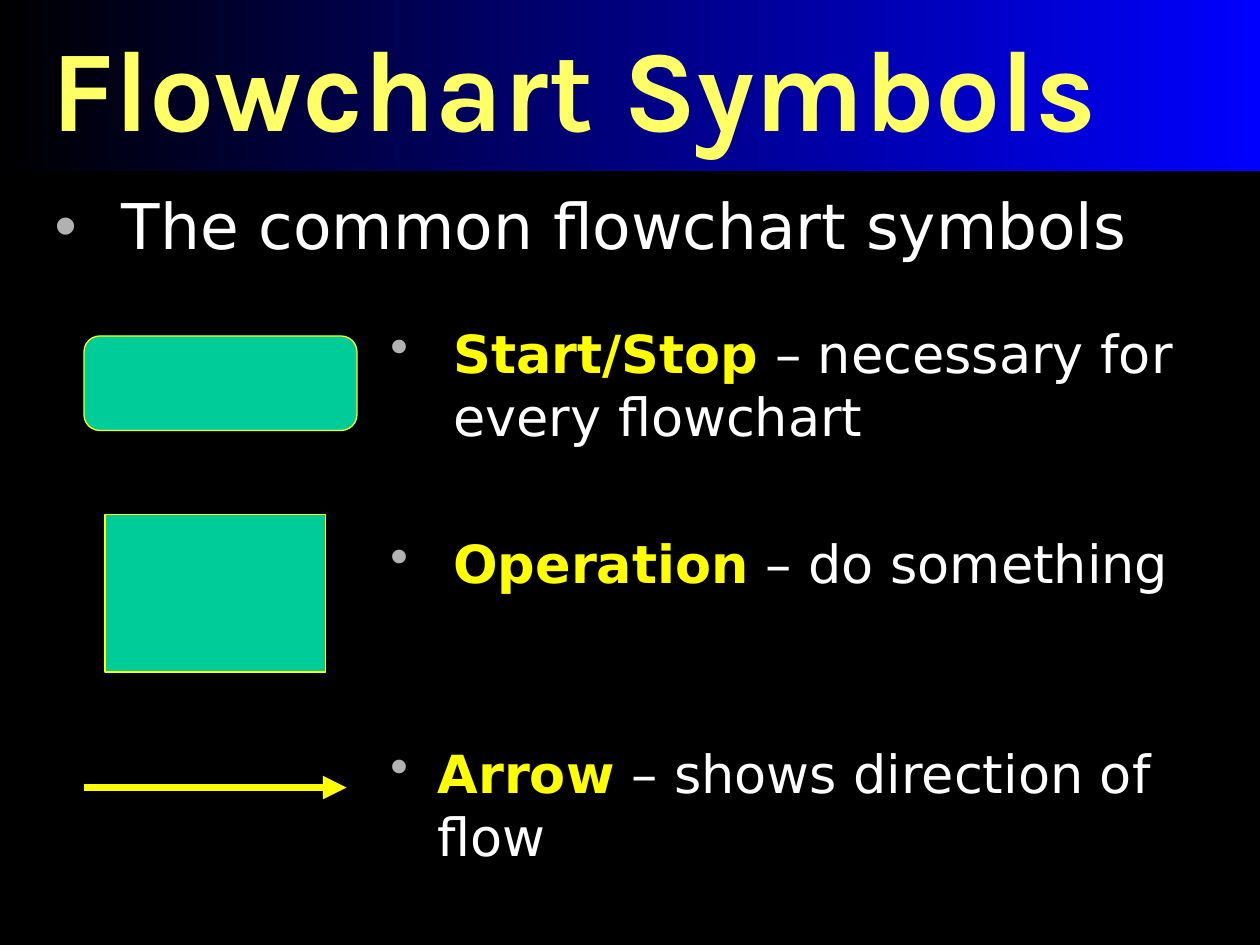
from dataclasses import dataclass
from typing import Any, Optional

from lxml.etree import SubElement
from pptx import Presentation
from pptx.dml.color import RGBColor
from pptx.enum.shapes import MSO_CONNECTOR, MSO_SHAPE
from pptx.enum.text import MSO_ANCHOR, MSO_AUTO_SIZE, PP_ALIGN
from pptx.oxml.ns import qn
from pptx.util import Emu, Pt

EMU_PER_PX = 7620
COLORS = {
    "background": "000000",
    "banner": "0000FF",
    "title": "FFFF66",
    "text": "FFFFFF",
    "accent": "FFFF00",
    "symbol": "00CC99",
    "bullet": "B2B2B2",
}
TITLE_FONT = {"name": "Karla", "size": Pt(66), "bold": True}
HEADING_FONT = {"name": "DejaVu Sans", "size": Pt(36), "bold": False}
TERM_FONT = {"name": "DejaVu Sans", "size": Pt(30), "bold": True}
MEANING_FONT = {**TERM_FONT, "bold": False}


@dataclass
class Box:
    left: int
    top: int
    width: int
    height: int


@dataclass
class FlowchartSymbol:
    term: str
    meaning: str
    box: Box
    preset: Optional[MSO_SHAPE]
    indent: int = 60


SYMBOLS = [
    FlowchartSymbol("Start/Stop", " – necessary for every flowchart", Box(80, 320, 260, 90),
                    MSO_SHAPE.FLOWCHART_ALTERNATE_PROCESS),
    FlowchartSymbol("Operation", " – do something", Box(100, 490, 210, 150),
                    MSO_SHAPE.FLOWCHART_PROCESS),
    FlowchartSymbol("Arrow", " – shows direction of flow", Box(80, 750, 250, 0), None, 45),
]
FIRST_TEXT_TOP = 300
ROW_STEP = 200


def px(length: int) -> Emu:
    return Emu(length * EMU_PER_PX)


def color(name: str) -> RGBColor:
    return RGBColor.from_string(COLORS[name])


def set_attributes(target: Any, values: dict) -> None:
    for name, value in values.items():
        setattr(target, name, value)


def edges(box: Box) -> list[Emu]:
    return [px(box.left), px(box.top), px(box.width), px(box.height)]


def place(shape: Any, box: Box) -> None:
    set_attributes(shape, dict(zip(("left", "top", "width", "height"), edges(box))))


def add_run(paragraph: Any, text: str, font: dict, color_name: str) -> None:
    run = paragraph.add_run()
    run.text = text
    set_attributes(run.font, font)
    run.font.color.rgb = color(color_name)


def add_bullet(paragraph: Any, indent: int) -> None:
    properties = paragraph._p.get_or_add_pPr()
    properties.set("marL", str(px(indent)))
    properties.set("indent", str(-px(indent)))
    bullet_color = SubElement(properties, qn("a:buClr"))
    SubElement(bullet_color, qn("a:srgbClr"), val=COLORS["bullet"])
    SubElement(properties, qn("a:buChar"), char="•")
    paragraph.space_before = Pt(0)


def fill_title(title: Any) -> None:
    place(title, Box(0, 0, 1200, 163))
    title.fill.gradient()
    title.fill.gradient_angle = 0
    for stop, name, position in zip(title.fill.gradient_stops, ("background", "banner"), (0, 1)):
        stop.color.rgb = color(name)
        stop.position = position
    set_attributes(title.text_frame, {
        "margin_left": px(49), "margin_right": px(17),
        "margin_top": px(16), "margin_bottom": px(16),
        "vertical_anchor": MSO_ANCHOR.MIDDLE,
        "auto_size": MSO_AUTO_SIZE.NONE, "word_wrap": True,
    })
    paragraph = title.text_frame.paragraphs[0]
    set_attributes(paragraph, {"alignment": PP_ALIGN.LEFT, "space_before": Pt(0)})
    add_run(paragraph, "Flowchart Symbols", TITLE_FONT, "title")


def fill_body(body: Any) -> None:
    place(body, Box(40, 180, 1160, 90))
    set_attributes(body.text_frame, {"auto_size": MSO_AUTO_SIZE.NONE, "word_wrap": True})
    paragraph = body.text_frame.paragraphs[0]
    add_bullet(paragraph, 45)
    paragraph.line_spacing = 0.9
    add_run(paragraph, " The common flowchart symbols", HEADING_FONT, "text")


def add_arrow(shapes: Any, box: Box) -> None:
    left, top, width, height = edges(box)
    arrow = shapes.add_connector(MSO_CONNECTOR.STRAIGHT, left, top, left + width, top + height)
    set_attributes(arrow.line, {"width": Pt(4.5)})
    arrow.line.color.rgb = color("accent")
    SubElement(arrow.line._get_or_add_ln(), qn("a:tailEnd"), type="triangle")
    SubElement(arrow._element.spPr, qn("a:effectLst"))


def add_block(shapes: Any, preset: MSO_SHAPE, box: Box) -> None:
    block = shapes.add_shape(preset, *edges(box))
    block.shadow.inherit = False
    block.fill.solid()
    block.fill.fore_color.rgb = color("symbol")
    block.line.color.rgb = color("accent")
    block.line.width = Pt(0.75)


def add_symbol(slide: Any, symbol: FlowchartSymbol, text_top: int) -> None:
    shapes = slide.shapes.add_group_shape().shapes
    text_box = shapes.add_textbox(*edges(Box(360, text_top, 820, 150)))
    text_box.text_frame.word_wrap = True
    paragraph = text_box.text_frame.paragraphs[0]
    add_bullet(paragraph, symbol.indent)
    add_run(paragraph, symbol.term, TERM_FONT, "accent")
    add_run(paragraph, symbol.meaning, MEANING_FONT, "text")
    if symbol.preset is None:
        add_arrow(shapes, symbol.box)
    else:
        add_block(shapes, symbol.preset, symbol.box)


def main() -> None:
    presentation = Presentation()
    set_attributes(presentation, {"slide_width": px(1200), "slide_height": px(900)})
    slide = presentation.slides.add_slide(presentation.slide_layouts[1])
    slide.background.fill.solid()
    slide.background.fill.fore_color.rgb = color("background")
    fill_title(slide.shapes.title)
    fill_body(slide.placeholders[1])
    for row, symbol in enumerate(SYMBOLS):
        add_symbol(slide, symbol, FIRST_TEXT_TOP + row * ROW_STEP)
    presentation.save("out.pptx")


if __name__ == "__main__":
    main()
